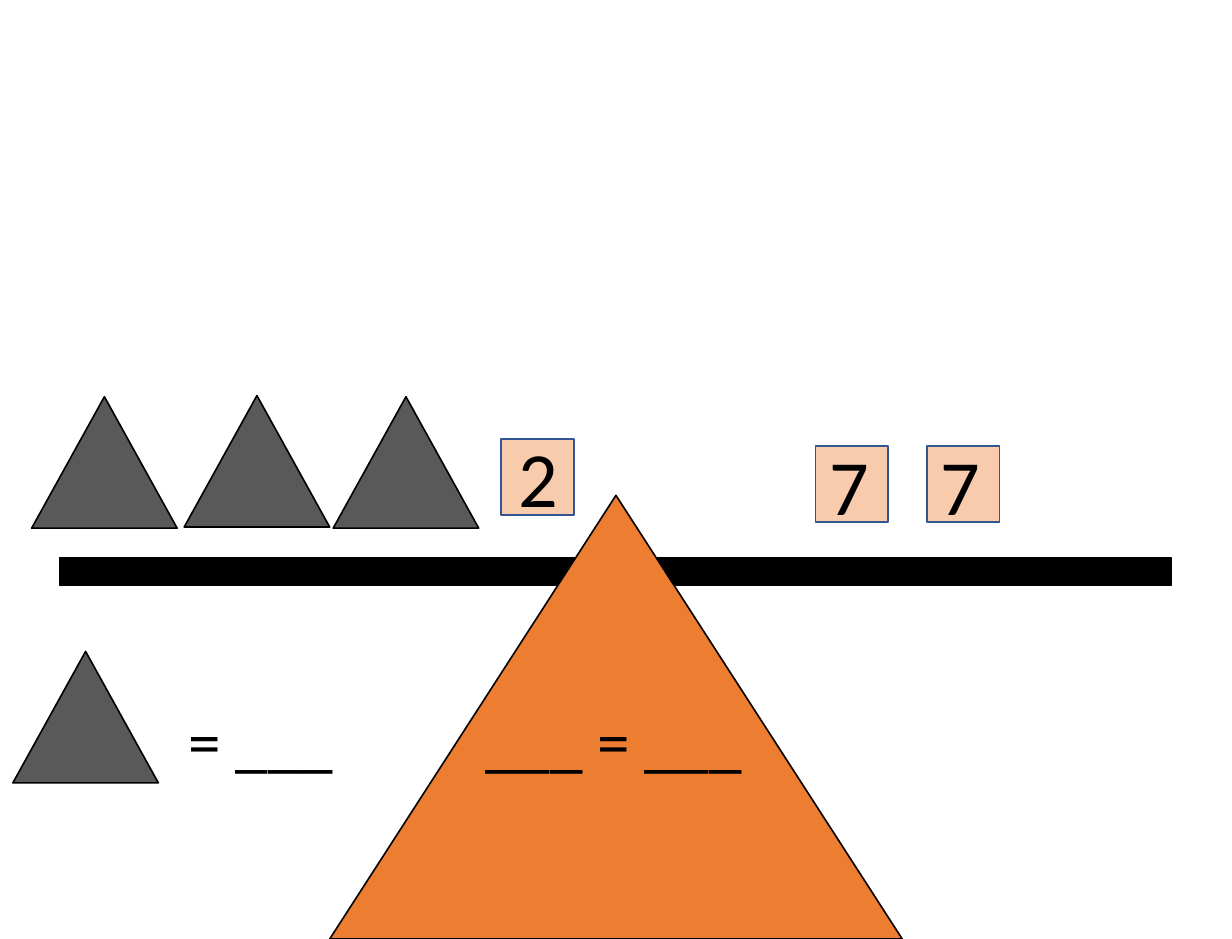
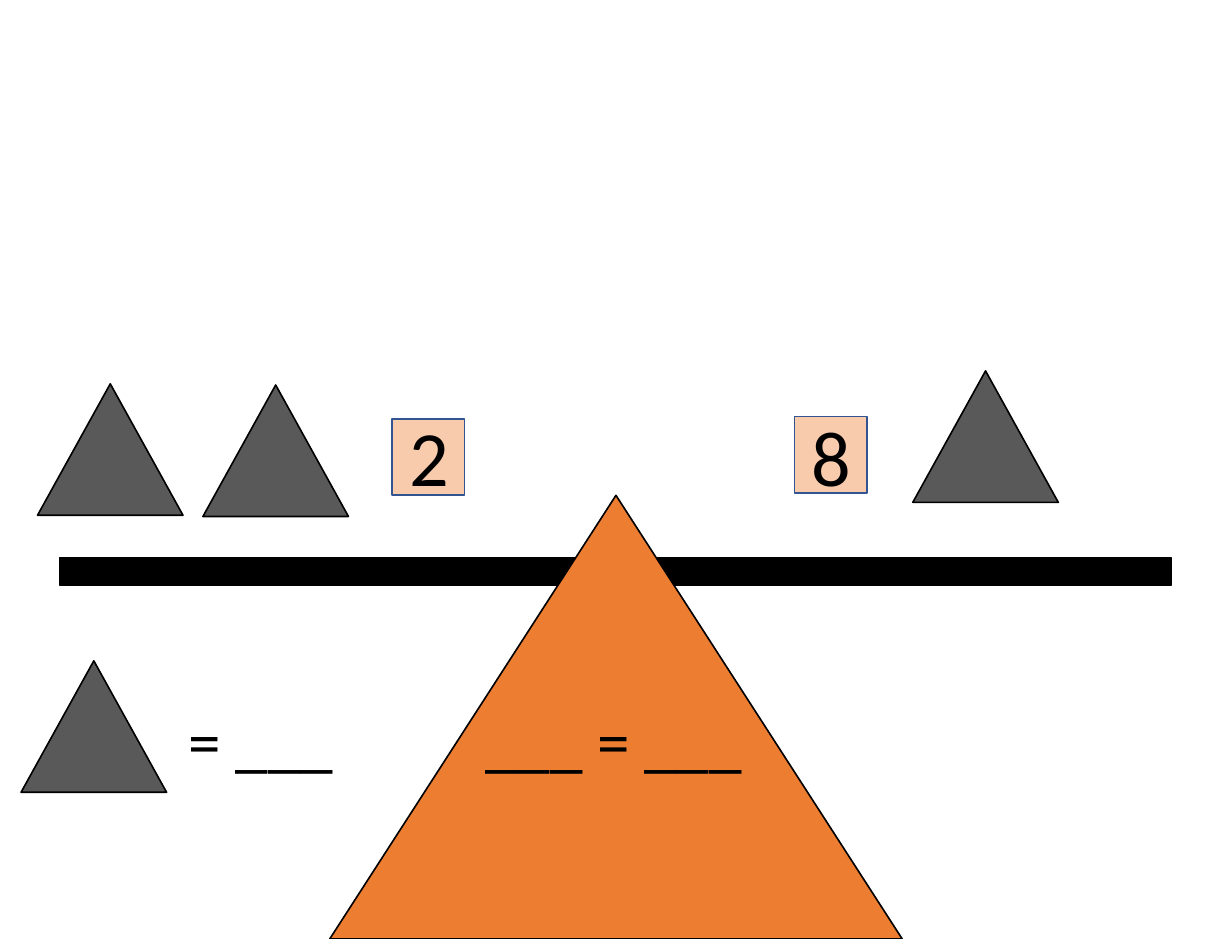
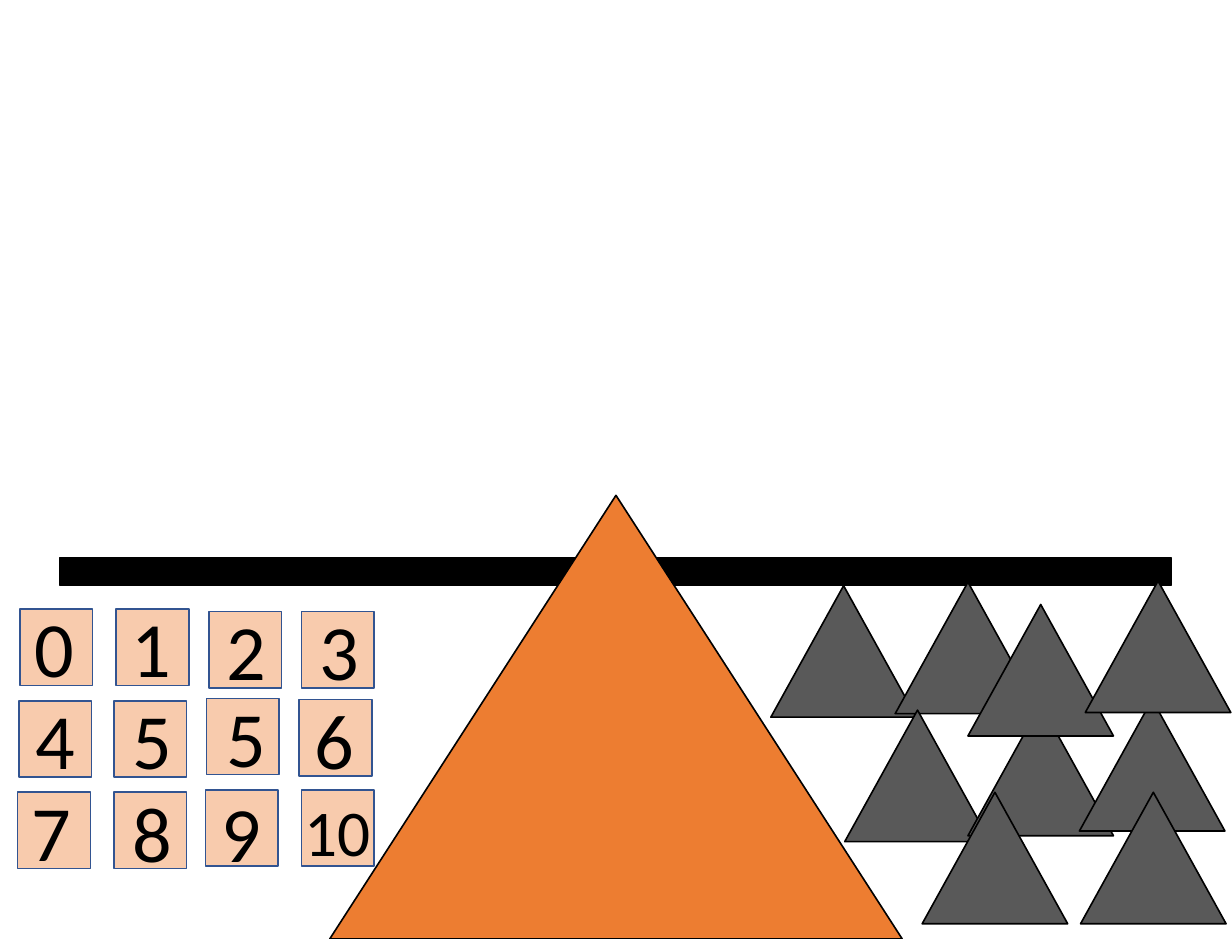
from pptx import Presentation
from pptx.dml.color import RGBColor
from pptx.enum.shapes import MSO_SHAPE
from pptx.enum.text import MSO_AUTO_SIZE, PP_ALIGN
from pptx.util import Inches, Pt

RECT = MSO_SHAPE.RECTANGLE
TRIANGLE = MSO_SHAPE.ISOSCELES_TRIANGLE
GROW = MSO_AUTO_SIZE.SHAPE_TO_FIT_TEXT
LEFT, CENTER = PP_ALIGN.LEFT, PP_ALIGN.CENTER

FONT = "Calibri"
BLACK, ORANGE, GREY = "000000", "ED7D31", "595959"
PEACH, BLUE = "F8CBAD", "325491"

BEAM = (0.51, 4.75, 9.47, 0.24)
FULCRUM = (2.81, 4.22, 4.88, 3.78)
WEIGHT_SIZE = (1.24, 1.12)
TILE_SIZE = (0.62, 0.65)
LABEL_SIZES = {1: (0.59, 0.91, 48), 2: (0.86, 0.77, 40)}

EQUATIONS = [
    ("= ___", (1.51, 5.92, 2.76, 0.77)),
    ("___ = ___", (4.04, 5.92, 2.41, 0.77)),
]

# Each tile: number, corner of the square, corner of its label
SLIDES = [
    {
        "tiles": [
            ("2", (4.27, 3.74), (4.29, 3.61)),
            ("7", (6.95, 3.8), (6.94, 3.68)),
            ("7", (7.9, 3.8), (7.89, 3.68)),
        ],
        "weights": [(2.84, 3.38), (1.57, 3.37), (0.11, 5.55), (0.27, 3.38)],
        "equations": EQUATIONS,
    },
    {
        "tiles": [
            ("2", (3.34, 3.57), (3.36, 3.43)),
            ("8", (6.77, 3.55), (6.79, 3.43)),
        ],
        "weights": [(1.73, 3.28), (7.78, 3.16), (0.18, 5.63), (0.32, 3.27)],
        "equations": EQUATIONS,
    },
    {
        "tiles": [
            ("0", (0.17, 5.19), (0.17, 5.06)),
            ("1", (0.99, 5.19), (0.99, 5.06)),
            ("2", (1.78, 5.21), (1.8, 5.08)),
            ("3", (2.57, 5.21), (2.6, 5.08)),
            ("4", (0.16, 5.97), (0.18, 5.84)),
            ("5", (0.97, 5.97), (1, 5.84)),
            ("6", (2.55, 5.96), (2.55, 5.84)),
            ("7", (0.15, 6.75), (0.14, 6.62)),
            ("8", (0.97, 6.75), (1, 6.63)),
            ("9", (1.75, 6.73), (1.76, 6.63)),
            ("10", (2.57, 6.73), (2.45, 6.69)),
            ("5", (1.76, 5.95), (1.8, 5.82)),
        ],
        "weights": [
            (6.57, 4.99), (7.63, 4.96), (7.2, 6.05),
            (8.25, 6), (9.2, 5.96), (8.25, 5.15),
            (9.25, 4.95), (7.86, 6.75), (9.21, 6.75),
        ],
        "equations": [],
    },
]


def rgb(color):
    return RGBColor.from_string(color)


def add_block(shapes, kind, box, fill, line=BLACK):
    sp = shapes.add_shape(kind, *map(Inches, box))
    sp.shadow.inherit = False
    sp.fill.solid()
    sp.fill.fore_color.rgb = rgb(fill)
    sp.line.color.rgb = rgb(line)
    sp.line.width = Pt(1)


def add_text(shapes, text, box, size, align=LEFT):
    tf = shapes.add_textbox(*map(Inches, box)).text_frame
    tf.word_wrap = True
    tf.auto_size = GROW
    p = tf.paragraphs[0]
    p.text = text
    p.alignment = align
    p.font.name = FONT
    p.font.size = Pt(size)
    p.font.color.rgb = rgb(BLACK)


def add_scale(s):
    shapes = s.shapes.add_group_shape().shapes
    add_block(shapes, RECT, BEAM, BLACK)
    add_block(shapes, TRIANGLE, FULCRUM, ORANGE)


def add_tile(s, number, corner, label_corner):
    shapes = s.shapes.add_group_shape().shapes
    width, height, size = LABEL_SIZES[len(number)]
    add_block(shapes, RECT, corner + TILE_SIZE, PEACH, BLUE)
    add_text(shapes, number, label_corner + (width, height), size, CENTER)


def main():
    prs = Presentation()
    prs.slide_width, prs.slide_height = Inches(10.5), Inches(8)
    for content in SLIDES:
        s = prs.slides.add_slide(prs.slide_layouts[6])
        add_scale(s)
        for tile in content["tiles"]:
            add_tile(s, *tile)
        for corner in content["weights"]:
            add_block(s.shapes, TRIANGLE, corner + WEIGHT_SIZE, GREY)
        for text, box in content["equations"]:
            add_text(s.shapes, text, box, 40)
    prs.save("out.pptx")


if __name__ == "__main__":
    main()
